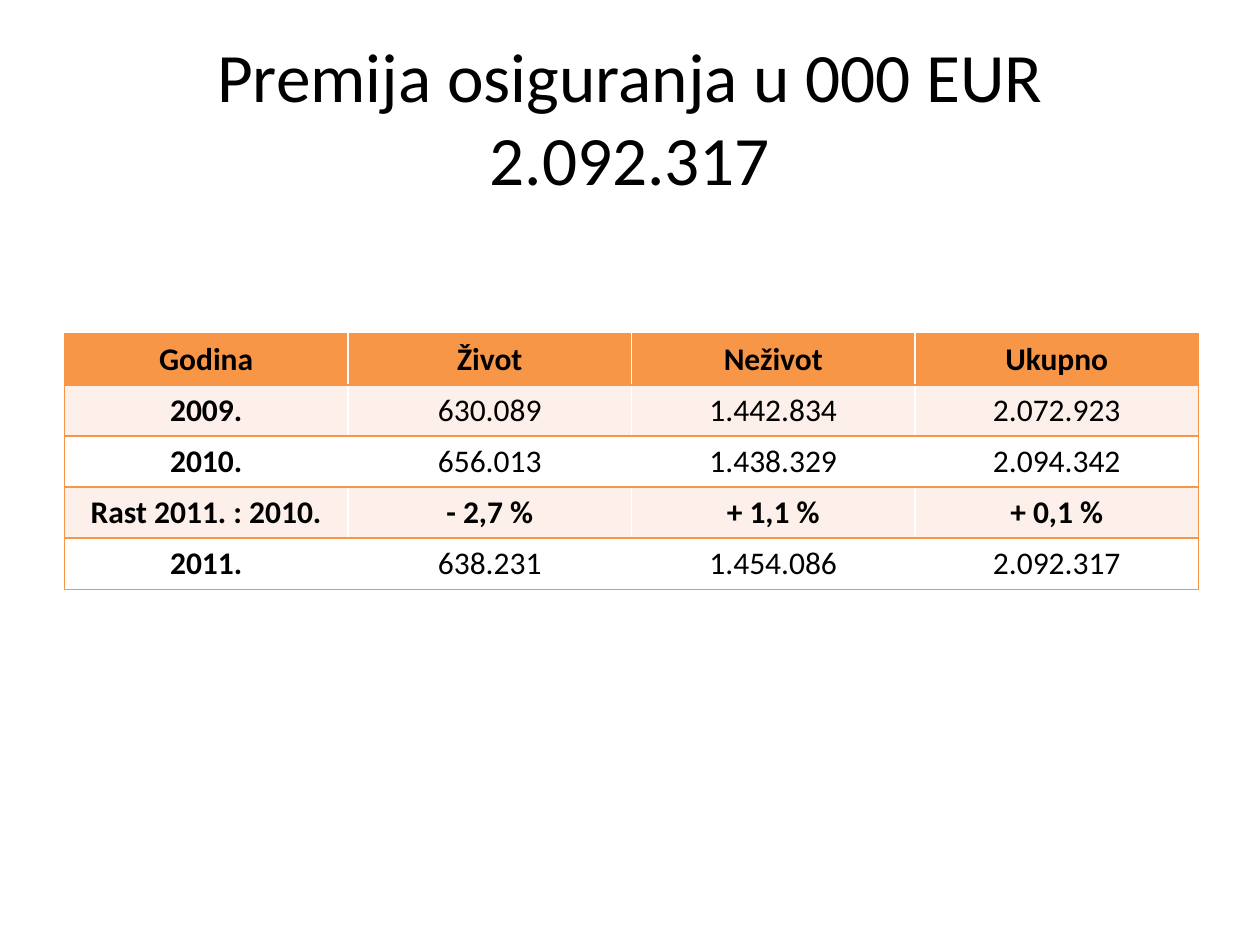
import pptx
import pptx.util
import pptx.dml.color
import pptx.enum.text
import pptx.oxml
import pptx.oxml.ns

Cm = pptx.util.Cm
Pt = pptx.util.Pt
FONT = "Calibri"
HUES = {"text": "000000", "head": "F79646", "line": "F79646",
        "band": "FDEFE9", "plain": "FFFFFF"}
TITLE = "Premija osiguranja u 000 EUR 2.092.317"
ROWS = [
    ["Godina", "Život", "Neživot", "Ukupno"],
    ["2009.", "630.089", "1.442.834", "2.072.923"],
    ["2010.", "656.013", "1.438.329", "2.094.342"],
    ["Rast 2011. : 2010.", "- 2,7 %", "+ 1,1 %", "+ 0,1 %"],
    ["2011.", "638.231", "1.454.086", "2.092.317"],
]
BOLD = (0, 3)


def color(name):
    """Return the named colour."""
    return pptx.dml.color.RGBColor.from_string(HUES[name])


def write(frame, text, size, bold=False):
    """Put one centred run into a text frame."""
    para = frame.paragraphs[0]
    para.alignment = pptx.enum.text.PP_ALIGN.CENTER
    run = para.add_run()
    run.text = text
    run.font.name = FONT
    run.font.size = Pt(size)
    run.font.bold = bold
    run.font.color.rgb = color("text")


def border(cell, sides):
    """Draw thin lines on the given sides of a cell."""
    props = cell._tc.get_or_add_tcPr()
    for side in sides:
        props.append(pptx.oxml.parse_xml(
            f'<a:ln{side} {pptx.oxml.ns.nsdecls("a")} w="{Pt(1)}"><a:solidFill>'
            f'<a:srgbClr val="{HUES["line"]}"/></a:solidFill></a:ln{side}>'))


def add_title(slide):
    """Place and fill the title."""
    title = slide.shapes.title
    title.left, title.top = Cm(1.27), Cm(0.76)
    title.width, title.height = Cm(22.86), Cm(3.18)
    frame = title.text_frame
    frame.word_wrap = True
    frame.auto_size = pptx.enum.text.MSO_AUTO_SIZE.NONE
    frame.vertical_anchor = pptx.enum.text.MSO_ANCHOR.MIDDLE
    write(frame, TITLE, 39.6)


def add_grid(slide):
    """Build the premium table."""
    last = len(ROWS[0]) - 1
    grid = slide.shapes.add_table(len(ROWS), last + 1, Cm(1.3), Cm(6.73),
                                  Cm(22.86), Cm(5.15)).table
    for r, row in enumerate(ROWS):
        fill = "head" if r == 0 else "band" if r % 2 else "plain"
        for c, text in enumerate(row):
            cell = grid.cell(r, c)
            write(cell.text_frame, text, 18, c == 0 or r in BOLD)
            sides = ["L"] * (c == 0) + ["R"] * (c == last) + ["T", "B"]
            border(cell, sides)
            cell.fill.solid()
            cell.fill.fore_color.rgb = color(fill)


def main():
    """Build and save the slide."""
    deck = pptx.Presentation()
    deck.slide_width, deck.slide_height = Cm(25.4), Cm(19.05)
    slide = deck.slides.add_slide(deck.slide_layouts[5])
    add_title(slide)
    add_grid(slide)
    deck.save("out.pptx")


if __name__ == "__main__":
    main()
